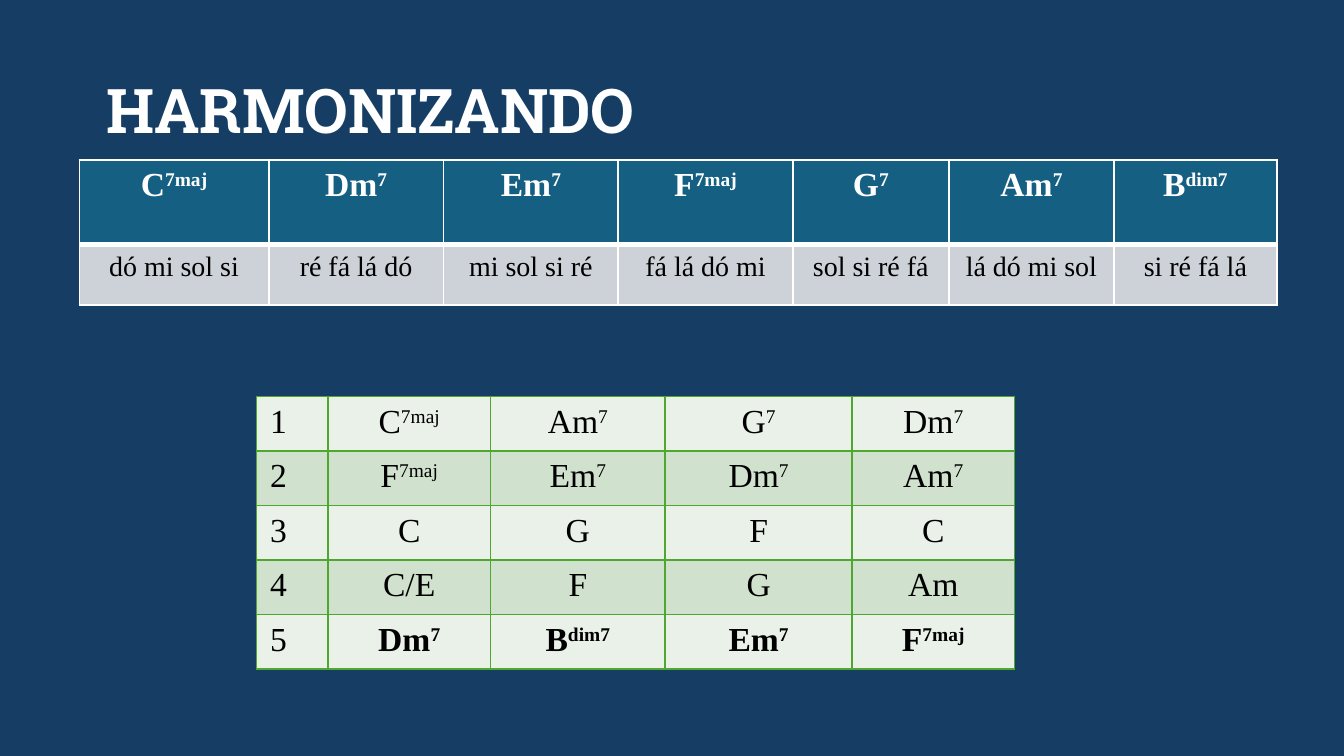
from lxml import etree
from pptx import Presentation
from pptx.dml.color import RGBColor
from pptx.enum.text import MSO_ANCHOR, PP_ALIGN
from pptx.oxml.ns import qn
from pptx.util import Inches, Pt

W = 10
H = W * 9 / 16
NAVY = RGBColor(0x16, 0x3E, 0x64)
TEAL = RGBColor(0x15, 0x60, 0x82)
GREY = RGBColor(0xCC, 0xD2, 0xD8)
GREEN = RGBColor(0x4E, 0xA7, 0x2E)
PALE = RGBColor(0xE9, 0xF1, 0xE8)
SAGE = RGBColor(0xD0, 0xE1, 0xCD)
WHITE = RGBColor(0xFF, 0xFF, 0xFF)
BLACK = RGBColor(0, 0, 0)
HEADING, BODY = "Roboto Slab", "Times New Roman"

# A caret starts the raised part of a chord name.
SCALE = [
    ("C^7maj", "dó mi sol si"), ("Dm^7", "ré fá lá dó"),
    ("Em^7", "mi sol si ré"), ("F^7maj", "fá lá dó mi"),
    ("G^7", "sol si ré fá"), ("Am^7", "lá dó mi sol"),
    ("B^dim7", "si ré fá lá"),
]
PROGRESSIONS = [
    "C^7maj Am^7 G^7 Dm^7",
    "F^7maj Em^7 Dm^7 Am^7",
    "C G F C",
    "C/E F G Am",
    "Dm^7 B^dim7 Em^7 F^7maj",
]


def add_run(p, text, size, color, bold, font=BODY):
    r = p.add_run()
    r.text = text
    f = r.font
    f.name, f.size, f.bold = font, Pt(size), bold
    f.color.rgb = color
    return r


def set_borders(cell, color, **widths):
    """Draw the four edges 1 pt wide unless a width is given for one."""
    tcPr = cell._tc.get_or_add_tcPr()
    for side in "LRTB":
        ln = etree.SubElement(tcPr, qn(f"a:ln{side}"), w=str(Pt(widths.get(side, 1))))
        fill = etree.SubElement(ln, qn("a:solidFill"))
        etree.SubElement(fill, qn("a:srgbClr"), val=str(color))


def fill_cell(cell, text, size, color, fill, bold=False, align=PP_ALIGN.CENTER):
    cell.fill.solid()
    cell.fill.fore_color.rgb = fill
    p = cell.text_frame.paragraphs[0]
    p.alignment = align
    root, _, raised = text.partition("^")
    add_run(p, root, size, color, bold)
    if raised:
        r = add_run(p, raised, size, color, bold)
        r._r.get_or_add_rPr().set("baseline", "30000")


def add_grid(s, box, cols, rows):
    """Add a plain table whose columns and rows share the box by weight."""
    x, y, w, h = box
    table = s.shapes.add_table(len(rows), len(cols), Inches(x), Inches(y),
                               Inches(w), Inches(h)).table
    table.first_row = table.horz_banding = False
    for col, share in zip(table.columns, cols):
        col.width = Inches(w * share / sum(cols))
    for row, share in zip(table.rows, rows):
        row.height = Inches(h * share / sum(rows))
    return table


def add_title(s, box, text):
    sp = s.shapes.title
    sp.left, sp.top, sp.width, sp.height = map(Inches, box)
    tf = sp.text_frame
    tf.word_wrap = True
    tf.vertical_anchor = MSO_ANCHOR.MIDDLE
    p = tf.paragraphs[0]
    p.alignment = PP_ALIGN.LEFT
    p.line_spacing = 0.9
    add_run(p, text, 33, WHITE, True, HEADING)


def add_scale_table(s, box):
    table = add_grid(s, box, [1.41, 1.3, 1.3, 1.3, 1.16, 1.23, 1.21], [0.63, 0.45])
    for c, (chord, notes) in enumerate(SCALE):
        head, body = table.cell(0, c), table.cell(1, c)
        set_borders(head, WHITE, B=3)
        set_borders(body, WHITE, T=3)
        fill_cell(head, chord, 18, WHITE, TEAL, bold=True)
        fill_cell(body, notes, 15, BLACK, GREY)


def add_progression_table(s, box):
    table = add_grid(s, box, [0.53, 1.21, 1.3, 1.39, 1.21], [1] * len(PROGRESSIONS))
    for i, chords in enumerate(PROGRESSIONS):
        last = i == len(PROGRESSIONS) - 1
        for c, text in enumerate([str(i + 1)] + chords.split()):
            cell = table.cell(i, c)
            set_borders(cell, GREEN)
            fill_cell(cell, text, 18, BLACK, SAGE if i % 2 else PALE,
                      bold=last and c > 0,
                      align=PP_ALIGN.CENTER if c else PP_ALIGN.LEFT)


def main():
    prs = Presentation()
    prs.slide_width, prs.slide_height = Inches(W), Inches(H)
    s = prs.slides.add_slide(prs.slide_layouts[5])
    s.background.fill.solid()
    s.background.fill.fore_color.rgb = NAVY
    add_title(s, (0.69, 0.3, 8.62, 1.09), "HARMONIZANDO")
    add_scale_table(s, (0.59, 1.19, 8.91, 1.08))
    add_progression_table(s, (1.91, 2.95, 5.64, 2.03))
    prs.save("out.pptx")


if __name__ == "__main__":
    main()
